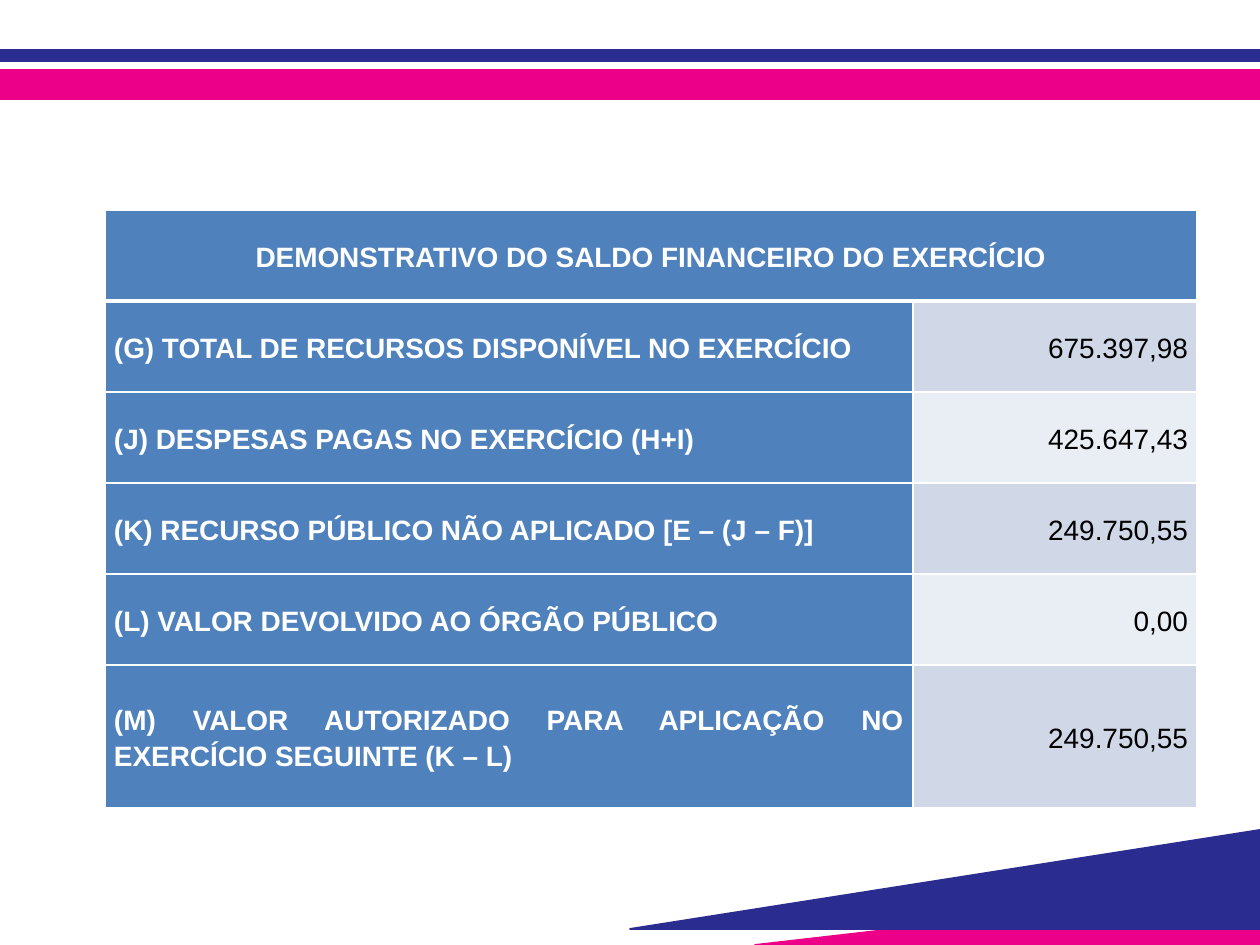
import pptx
import pptx.util
import pptx.dml.color
import pptx.enum.text
import lxml.etree

RGB = pptx.dml.color.RGBColor
NAVY = RGB(0x2B, 0x2C, 0x90)
PINK = RGB(0xEC, 0x00, 0x89)
BLUE = RGB(0x4F, 0x81, 0xBD)
DARK = RGB(0xD0, 0xD8, 0xE8)
PALE = RGB(0xE9, 0xED, 0xF4)
WHITE = RGB(0xFF, 0xFF, 0xFF)
BLACK = RGB(0x00, 0x00, 0x00)
PX = 914400 // 126
ALIGN = pptx.enum.text.PP_ALIGN
NS = "http://schemas.openxmlformats.org/drawingml/2006/main"

deck = pptx.Presentation()
deck.slide_width = 1260 * PX
deck.slide_height = 945 * PX
slide = deck.slides.add_slide(deck.slide_layouts[6])

# Bands at the top and wedges at the bottom
shapes = [
    (NAVY, [(0, 50), (1260, 50), (1260, 61), (0, 61)]),
    (PINK, [(0, 70), (1260, 70), (1260, 99), (0, 99)]),
    (PINK, [(1260, 887), (755, 945), (1260, 945)]),
    (NAVY, [(1260, 830), (630, 929), (1260, 929)]),
]
for color, points in shapes:
    pen = slide.shapes.build_freeform(*points[0], scale=PX)
    pen.add_line_segments(points[1:], close=True)
    shape = pen.convert_to_shape()
    shape.shadow.inherit = False
    shape.fill.solid()
    shape.fill.fore_color.rgb = color
    shape.line.color.rgb = color
    shape.line.width = pptx.util.Pt(1)


def edge(cell, widths):
    """Draw white borders; widths maps a side tag to points."""
    props = cell._tc.get_or_add_tcPr()
    for spot, (side, width) in enumerate(widths.items()):
        line = lxml.etree.Element(f"{{{NS}}}{side}", w=str(width * 12700))
        fill = lxml.etree.SubElement(line, f"{{{NS}}}solidFill")
        lxml.etree.SubElement(fill, f"{{{NS}}}srgbClr", val=str(WHITE))
        props.insert(spot, line)


def write(cell, text, fill, color, bold, align):
    cell.fill.solid()
    cell.fill.fore_color.rgb = fill
    cell.vertical_anchor = pptx.enum.text.MSO_ANCHOR.MIDDLE
    sides = {"margin_left": 9, "margin_right": 9, "margin_top": 0, "margin_bottom": 0}
    for name, value in sides.items():
        setattr(cell, name, value * PX)
    cell.text = text
    para = cell.text_frame.paragraphs[0]
    form = {"alignment": align, "line_spacing": 1.15, "space_after": pptx.util.Pt(6)}
    for name, value in form.items():
        setattr(para, name, value)
    font = para.runs[0].font
    style = {"name": "Arial", "size": pptx.util.Pt(16), "bold": bold}
    for name, value in style.items():
        setattr(font, name, value)
    font.color.rgb = color


title = "DEMONSTRATIVO DO SALDO FINANCEIRO DO EXERCÍCIO"
rows = [
    ("(G) TOTAL DE RECURSOS DISPONÍVEL NO EXERCÍCIO", "675.397,98"),
    ("(J) DESPESAS PAGAS NO EXERCÍCIO (H+I)", "425.647,43"),
    ("(K) RECURSO PÚBLICO NÃO APLICADO [E – (J – F)]", "249.750,55"),
    ("(L) VALOR DEVOLVIDO AO ÓRGÃO PÚBLICO", "0,00"),
    ("(M) VALOR AUTORIZADO PARA APLICAÇÃO NO EXERCÍCIO SEGUINTE (K – L)", "249.750,55"),
]
wide = [808, 284]
high = [91] * 5 + [143]
frame = slide.shapes.add_table(
    len(high), len(wide), 105 * PX, 210 * PX, sum(wide) * PX, sum(high) * PX)
table = frame.table
for col, width in zip(table.columns, wide):
    col.width = width * PX
for row, height in zip(table.rows, high):
    row.height = height * PX

head = table.cell(0, 0)
head.merge(table.cell(0, 1))
write(head, title, BLUE, WHITE, True, ALIGN.CENTER)
for num, (label, value) in enumerate(rows, 1):
    write(table.cell(num, 0), label, BLUE, WHITE, True, ALIGN.JUSTIFY)
    write(table.cell(num, 1), value, DARK if num % 2 else PALE, BLACK, False, ALIGN.RIGHT)
for num in range(len(high)):
    widths = {"lnL": 1, "lnR": 1, "lnT": 3 if num == 1 else 1, "lnB": 3 if num == 0 else 1}
    for col in range(len(wide)):
        edge(table.cell(num, col), widths)

deck.save("out.pptx")
